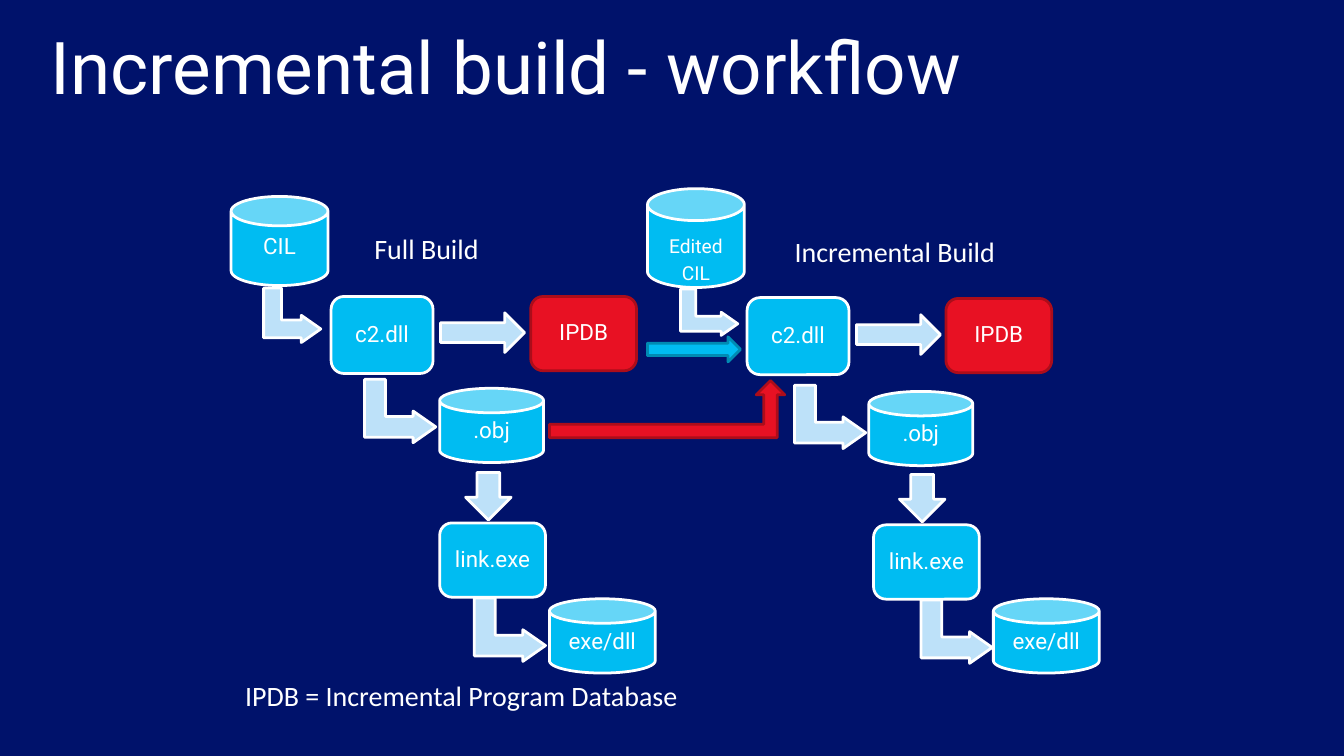
from dataclasses import dataclass

from pptx import Presentation
from pptx import util as u
from pptx.dml import color
from pptx.enum import shapes, text

WHITE, NAVY, CYAN, TEAL = "FFFFFF", "00126B", "00BCF2", "008BB3"
PALE, RED, MAROON = "BDE1F9", "E81123", "AC0D1A"
CAN = shapes.MSO_SHAPE.CAN
BOX = shapes.MSO_SHAPE.ROUNDED_RECTANGLE
BENT = shapes.MSO_SHAPE.BENT_UP_ARROW
RIGHT = shapes.MSO_SHAPE.RIGHT_ARROW
UP = shapes.MSO_SHAPE.UP_ARROW
ELBOW = (0.328, 0.25, 0.358)
CAN_CAP = (0.33,)
TOP, MIDDLE = text.MSO_ANCHOR.TOP, text.MSO_ANCHOR.MIDDLE
LEFT, CENTER = text.PP_ALIGN.LEFT, text.PP_ALIGN.CENTER


@dataclass
class Arrow:
    kind: shapes.MSO_SHAPE
    size: tuple[float, float]
    spots: list[tuple[float, float]]
    rotation: float = 90
    adjust: tuple[float, ...] = ()
    fill: str = PALE
    line: str = WHITE


@dataclass
class Stage:
    label: str
    kind: shapes.MSO_SHAPE
    size: tuple[float, float]
    spots: list[tuple[float, float]]
    fill: str = CYAN
    line: str = WHITE
    points: float = 16.3
    margins: tuple[float, float] = (0.18, 0.18)


@dataclass
class Caption:
    label: str
    spot: tuple[float, float]
    size: tuple[float, float]


ARROWS = [
    Arrow(BENT, (1.4, 1.47), [(6.81, 7.37)], adjust=ELBOW),
    Arrow(BENT, (1.19, 1.47), [(17.63, 7.29)], adjust=ELBOW),
    Arrow(BENT, (1.63, 1.83),
          [(9.47, 9.65), (20.52, 9.8), (12.29, 15.27), (23.77, 15.32)], adjust=ELBOW),
    Arrow(RIGHT, (1.22, 1.17), [(11.94, 12.17), (23.09, 12.22)]),
    Arrow(UP, (1.02, 2.16), [(11.89, 7.47), (22.58, 7.52)]),
    Arrow(RIGHT, (2.39, 0.64), [(16.64, 8.66)], 0, fill=CYAN, line=TEAL),
    Arrow(BENT, (6.05, 1.47), [(14.12, 9.78)], 0, (0.234, 0.25, 0.25), RED, MAROON),
]
STAGES = [
    Stage("CIL", CAN, (2.49, 2.29), [(5.94, 5.05)], margins=(0.05, 0.1)),
    Stage("Edited\nCIL", CAN, (2.49, 2.54), [(16.64, 4.85)], points=14, margins=(0.76, 0)),
    Stage("c2.dll", BOX, (2.62, 1.98), [(8.51, 7.62), (19.2, 7.65)]),
    Stage("IPDB", BOX, (2.72, 1.91), [(13.64, 7.62), (24.31, 7.67)], RED, MAROON),
    Stage(".obj", CAN, (2.67, 1.91), [(11.3, 9.98), (22.33, 10.06)]),
    Stage("link.exe", BOX, (2.72, 1.91), [(11.3, 13.44), (22.45, 13.49)]),
    Stage("exe/dll", CAN, (2.72, 1.91), [(14.12, 15.39), (25.53, 15.39)]),
]
CAPTIONS = [
    Caption("Full Build", (9.37, 5.82), (3.61, 1.14)),
    Caption("Incremental Build", (20.17, 5.89), (6.17, 1.14)),
    Caption("IPDB = Incremental Program Database", (6.05, 17.32), (11.81, 1.12)),
]


def rgb(value: str) -> color.RGBColor:
    return color.RGBColor.from_string(value)


def apply(target, values: dict) -> None:
    for name, value in values.items():
        setattr(target, name, value)


def frame(spot: tuple[float, float], size: tuple[float, float]) -> list[int]:
    return [u.Cm(length) for length in (*spot, *size)]


def write(holder, label: str, face: str, points: float,
          frame_format: dict, paragraph_format: dict) -> None:
    body = holder.text_frame
    body.text = label
    apply(body, {"word_wrap": True, **frame_format})
    for paragraph in body.paragraphs:
        apply(paragraph, paragraph_format)
        for run in paragraph.runs:
            apply(run.font, {"name": face, "size": u.Pt(points)})
            run.font.color.rgb = rgb(WHITE)


def draw_outline(slide, part: Arrow | Stage, spot: tuple[float, float],
                 adjust: tuple[float, ...]):
    outline = slide.shapes.add_shape(part.kind, *frame(spot, part.size))
    outline.shadow.inherit = False
    outline.fill.solid()
    outline.fill.fore_color.rgb = rgb(part.fill)
    outline.line.color.rgb = rgb(part.line)
    outline.line.width = u.Pt(2)
    for index, value in enumerate(adjust):
        outline.adjustments[index] = value
    return outline


def draw_arrow(slide, arrow: Arrow) -> None:
    for spot in arrow.spots:
        draw_outline(slide, arrow, spot, arrow.adjust).rotation = arrow.rotation


def draw_stage(slide, stage: Stage) -> None:
    above, below = stage.margins
    frame_format = {
        "vertical_anchor": MIDDLE,
        "margin_left": u.Cm(0.18), "margin_right": u.Cm(0.18),
        "margin_top": u.Cm(above), "margin_bottom": u.Cm(below),
    }
    paragraph_format = {"alignment": CENTER, "line_spacing": 0.9, "space_after": u.Pt(5)}
    for spot in stage.spots:
        outline = draw_outline(slide, stage, spot, CAN_CAP if stage.kind == CAN else ())
        write(outline, stage.label, "Roboto", stage.points, frame_format, paragraph_format)


def draw_caption(slide, caption: Caption) -> None:
    holder = slide.shapes.add_textbox(*frame(caption.spot, caption.size))
    write(holder, caption.label, "Calibri", 20.4, {}, {"alignment": LEFT})


def draw_title(slide, label: str) -> None:
    title = slide.shapes.title
    left, top, width, height = frame((0.79, 0.43), (31.67, 1.73))
    apply(title, {"left": left, "top": top, "width": width, "height": height})
    write(title, label, "Roboto", 53, {
        "vertical_anchor": TOP, "auto_size": text.MSO_AUTO_SIZE.NONE,
        "margin_left": u.Cm(0.51), "margin_right": u.Cm(0.51),
        "margin_top": u.Cm(0.13), "margin_bottom": u.Cm(0.13),
    }, {"alignment": LEFT, "line_spacing": 1.0})


def main() -> None:
    deck = Presentation()
    apply(deck, {"slide_width": u.Cm(34.54), "slide_height": u.Cm(19.43)})
    slide = deck.slides.add_slide(deck.slide_layouts[5])
    slide.background.fill.solid()
    slide.background.fill.fore_color.rgb = rgb(NAVY)
    draw_title(slide, "Incremental build - workflow")
    for arrow in ARROWS:
        draw_arrow(slide, arrow)
    for stage in STAGES:
        draw_stage(slide, stage)
    for caption in CAPTIONS:
        draw_caption(slide, caption)
    deck.save("out.pptx")


if __name__ == "__main__":
    main()
